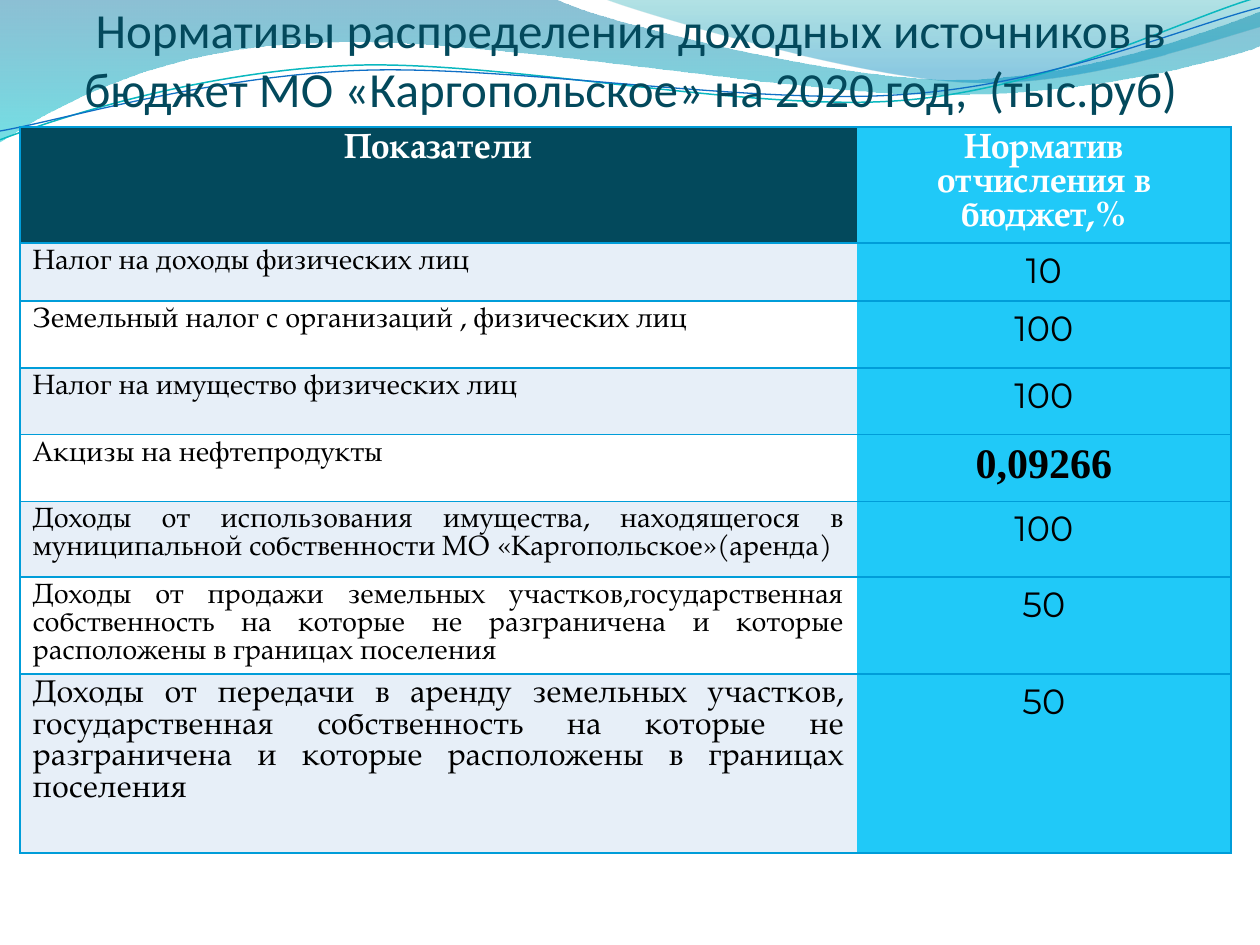
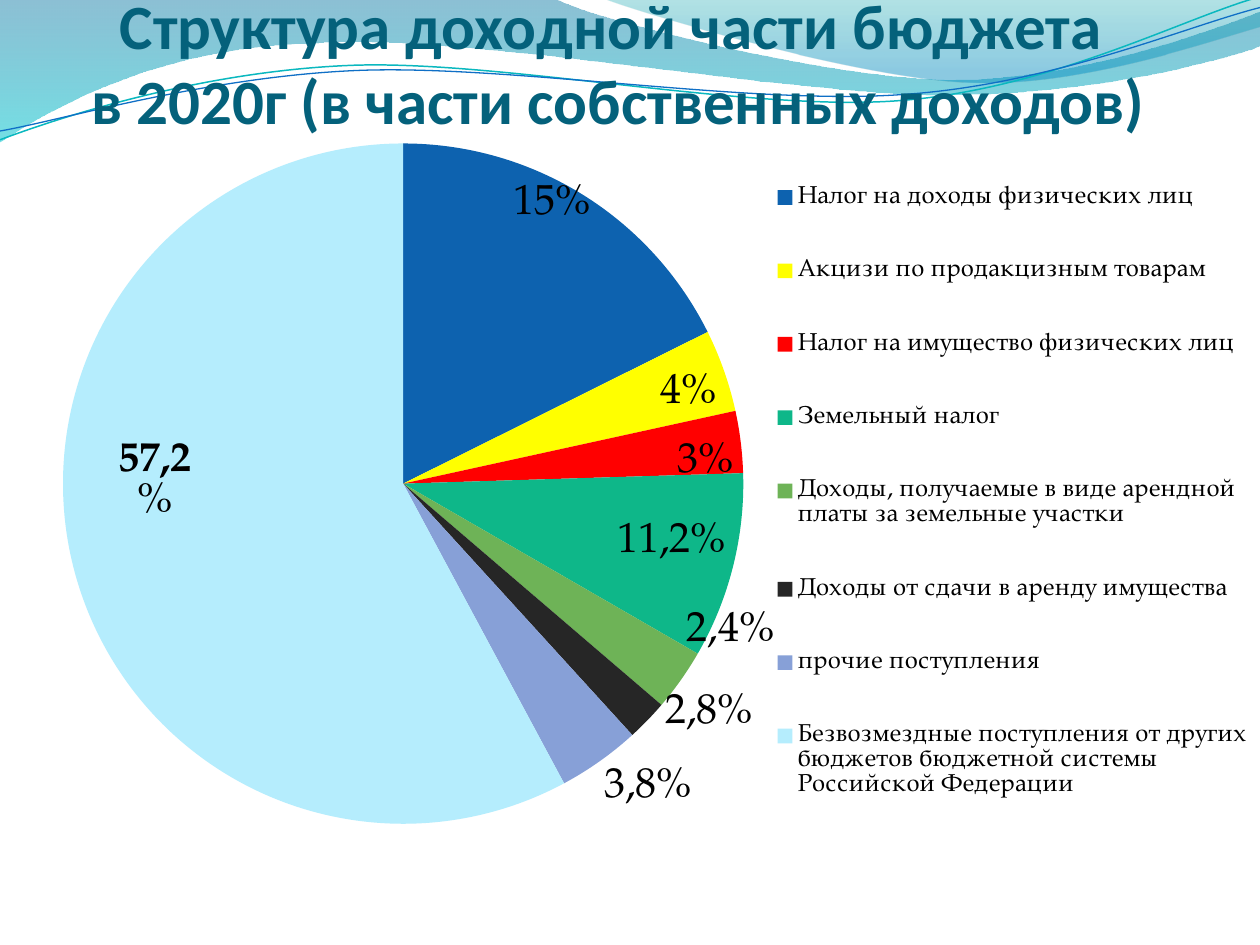
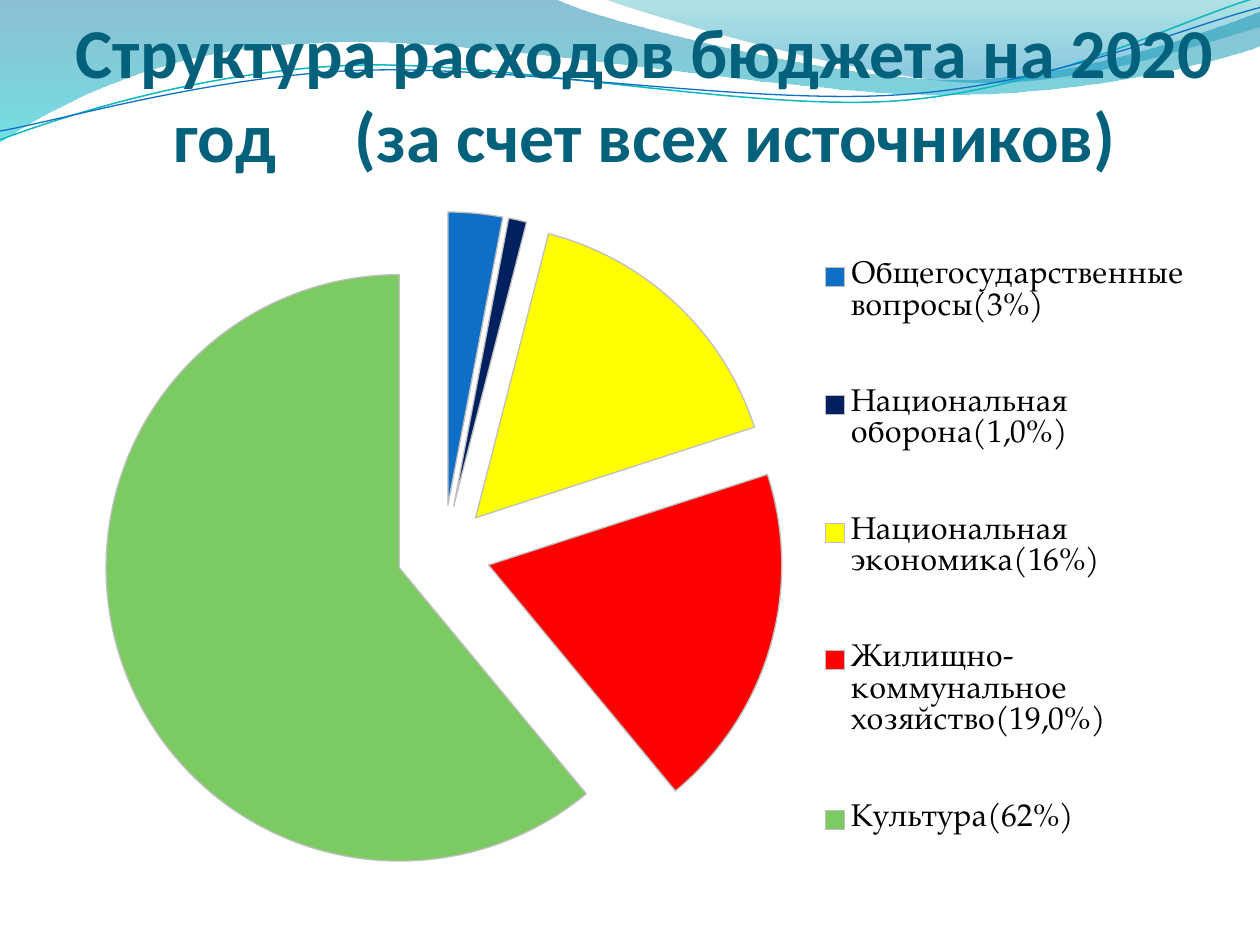
"""Build three slides on the 2020 municipal budget."""
from lxml import etree
from pptx import Presentation
from pptx import util as u
from pptx.chart.data import CategoryChartData
from pptx.dml.color import RGBColor
from pptx.enum import chart as charts, text
from pptx.oxml import ns

BODY_FONT = "TeX Gyre Pagella"
NUMBER_FONT = "Montserrat"
TITLE_FONT = "Calibri"
BLACK = RGBColor(0x00, 0x00, 0x00)
WHITE = RGBColor(0xFF, 0xFF, 0xFF)
DARK_TEAL = RGBColor(0x03, 0x49, 0x5C)
TEAL = RGBColor(0x04, 0x61, 0x7B)
SKY = RGBColor(0x20, 0xC9, 0xF8)
PALE = RGBColor(0xE7, 0xEF, 0xF8)
BORDER = RGBColor(0x00, 0x9D, 0xD9)
BLUE = RGBColor(0x0F, 0x6F, 0xC6)
DEEP_BLUE = RGBColor(0x0D, 0x62, 0xAF)
NAVY = RGBColor(0x00, 0x20, 0x60)
YELLOW = RGBColor(0xFF, 0xFF, 0x00)
RED = RGBColor(0xFF, 0x00, 0x00)
SEA_GREEN = RGBColor(0x0E, 0xB7, 0x89)
GREEN = RGBColor(0x7C, 0xCA, 0x62)
LEAF = RGBColor(0x6E, 0xB3, 0x57)
CHARCOAL = RGBColor(0x26, 0x26, 0x26)
LAVENDER = RGBColor(0x87, 0xA0, 0xD7)
ICE = RGBColor(0xB5, 0xED, 0xFD)
GREY = RGBColor(0xBF, 0xBF, 0xBF)
AQUA_LINE = RGBColor(0x0A, 0xB8, 0xBF)
NO_STYLE = "{2D5ABB26-0587-4C30-8999-92F81FD0307C}"

WIDE_WAVE = [
    [(0, 0)], [(4.4, -0.01)],
    [(4.76, 0.17), (6.64, 0.63), (7.58, 0.63)],
    [(8.53, 0.63), (9.58, 0.26), (10, 0.09)],
    [(10.01, 0.36)],
    [(9.83, 0.44), (8.7, 0.76), (7.46, 0.75)],
    [(6.22, 0.75), (3.82, 0.28), (2.57, 0.34)],
    [(1.29, 0.36), (0.46, 0.83), (-0.01, 1.13)],
]
RIGHT_WAVE = [
    [(4.79, -0.01)],
    [(5.09, 0.11), (6.82, 0.62), (7.69, 0.65)],
    [(8.56, 0.69), (9.61, 0.32), (10, 0.21)],
    [(10, 0)],
]
AQUA_CURVE = [
    [(0, 1.11)],
    [(0.48, 0.93), (1.58, 0.57), (2.77, 0.52)],
    [(3.95, 0.47), (5.93, 0.89), (7.13, 0.8)],
    [(8.33, 0.71), (9.38, 0.15), (9.98, -0.02)],
]
BLUE_CURVE = [
    [(0, 1.04)],
    [(0.47, 0.96), (1.64, 0.61), (2.83, 0.56)],
    [(4.03, 0.51), (5.97, 0.84), (7.17, 0.75)],
    [(8.36, 0.67), (9.41, 0.21), (10, 0.06)],
]

RATES = [
    ("Налог на доходы физических лиц", "10", 0.46),
    ("Земельный налог с организаций , физических лиц", "100", 0.53),
    ("Налог на имущество физических лиц", "100", 0.53),
    ("Акцизы на нефтепродукты", "0,09266", 0.53),
    ("Доходы от использования имущества, находящегося в муниципальной "
     "собственности МО «Каргопольское»(аренда)", "100", 0.6),
    ("Доходы от продажи земельных участков,государственная собственность на "
     "которые не разграничена и которые расположены в границах поселения", "50", 0.77),
    ("Доходы от передачи в аренду земельных участков, государственная собственность "
     "на которые не разграничена и которые расположены в границах поселения", "50", 1.42),
]
INCOME = [
    ("Налог на доходы физических лиц", 18, DEEP_BLUE),
    ("Акцизи по продакцизным товарам", 4, YELLOW),
    ("Налог на имущество физических лиц", 3, RED),
    ("Земельный налог", 9, SEA_GREEN),
    ("Доходы, получаемые в виде арендной платы за земельные участки", 3, LEAF),
    ("Доходы от сдачи в аренду имущества", 2, CHARCOAL),
    ("прочие поступления", 4, LAVENDER),
    ("Безвозмездные поступления от других бюджетов бюджетной системы "
     "Российской Федерации", 59, ICE),
]
INSIDE = charts.XL_LABEL_POSITION.INSIDE_END
OUTSIDE = charts.XL_LABEL_POSITION.OUTSIDE_END
INCOME_LABELS = {
    0: (["15%"], INSIDE, (0.01, -0.02)),
    3: (["11,2%"], INSIDE, (0, 0)),
    4: (["2,4%"], OUTSIDE, (0, -0.09)),
    5: (["2,8%"], OUTSIDE, (0.01, -0.04)),
    6: (["3,8%"], OUTSIDE, (0, 0)),
    7: (["57,2", "%"], INSIDE, (0.03, -0.05)),
}
EXPENSES = [
    ("Общегосударственные вопросы(3%)", 3, BLUE),
    ("Национальная оборона(1,0%)", 1, NAVY),
    ("Национальная экономика(16%)", 16, YELLOW),
    ("Жилищно-коммунальное хозяйство(19,0%)", 19, RED),
    ("Культура(62%)", 61, GREEN),
]


def grid(value):
    """Turn tenths of the slide width into a length."""
    return u.Cm(value * 2.54)


def style(font, size, color, name=BODY_FONT, bold=False):
    """Set the look of a font."""
    font.size, font.name, font.bold = u.Pt(size), name, bold
    font.color.rgb = color


def add_span(para, words, *look, **options):
    """Add one styled run to a paragraph."""
    span = para.add_run()
    span.text = words
    style(span.font, *look, **options)
    return span


def add_outline(page, segments, closed):
    """Draw a freeform of lines and Bezier curves without shadow."""
    points = [(grid(x), grid(y)) for segment in segments for x, y in segment]
    builder = page.shapes.build_freeform(*points[0], scale=1.0)
    builder.add_line_segments(points[1:], close=closed)
    shape = builder.convert_to_shape()
    shape.shadow.inherit = False
    steps = iter(list(shape.element.iter(ns.qn("a:lnTo"))))
    for segment in segments[1:]:
        lines = [next(steps) for _ in segment]
        if len(lines) == 3:
            curve = etree.Element(ns.qn("a:cubicBezTo"))
            lines[0].addprevious(curve)
            for line in lines:
                curve.append(line[0])
                line.getparent().remove(line)
    return shape


def add_wave(page, segments, stops):
    """Draw a translucent band that fades from top to bottom."""
    wave = add_outline(page, segments, True)
    wave.line.fill.background()
    wave.fill.gradient()
    wave.fill.gradient_angle = 270
    for stop, (position, color, _) in zip(wave.fill.gradient_stops, stops):
        stop.position = position
        stop.color.rgb = RGBColor.from_string(color)
    colors = wave.element.spPr.iter(ns.qn("a:srgbClr"))
    for color, (_, _, opacity) in zip(colors, stops):
        etree.SubElement(color, ns.qn("a:alpha"), val=str(opacity * 1000))
    return wave


def add_curve(page, segments, color, width):
    """Draw a thin open curve."""
    curve = add_outline(page, segments, False)
    curve.fill.background()
    curve.line.color.rgb = color
    curve.line.width = u.Pt(width)
    return curve


def decorate(layout, page):
    """Draw the waves and hand them over to the shared layout."""
    tree = layout.shapes.element
    for holder in list(layout.placeholders):
        tree.remove(holder.element)
    waves = [
        add_wave(page, WIDE_WAVE, [(0, "0074A1", 45), (1, "00C6CF", 55)]),
        add_wave(page, RIGHT_WAVE, [(0, "00A1A9", 30), (0.8, "008BBF", 45)]),
        add_curve(page, AQUA_CURVE, AQUA_LINE, 0.85),
        add_curve(page, BLUE_CURVE, BLUE, 0.75),
    ]
    for wave in waves:
        tree.append(wave.element)


def add_title(page, area, lines, size, color=TEAL, bold=True, gap=0):
    """Add a centred title; the parts of a line are set apart by a wide space."""
    box = page.shapes.add_textbox(*map(grid, area))
    frame = box.text_frame
    frame.word_wrap = True
    frame.vertical_anchor = text.MSO_ANCHOR.BOTTOM
    frame.margin_left = frame.margin_right = frame.margin_bottom = 0
    frame.margin_top = grid(0.05)
    para = frame.paragraphs[0]
    para.alignment = text.PP_ALIGN.CENTER
    look = (size, color, TITLE_FONT, bold)
    for row, parts in enumerate(lines):
        if row:
            para.add_line_break()
        for place, part in enumerate(parts):
            if place:
                space = add_span(para, " ", *look)
                space.font._element.set("spc", str(gap * 100))
            add_span(para, part, *look)


def add_borders(cell, sides):
    """Draw the given cell sides, in the order L, R, T, B."""
    properties = cell._tc.get_or_add_tcPr()
    for index, side in enumerate(sides):
        line = etree.Element(ns.qn(f"a:ln{side}"), w=str(u.Pt(1)))
        fill = etree.SubElement(line, ns.qn("a:solidFill"))
        etree.SubElement(fill, ns.qn("a:srgbClr"), val=str(BORDER))
        properties.insert(index, line)


def fill_cell(cell, words, fill, sides, align, size, *look, pitch=None, **options):
    """Write one table cell, with a fixed line pitch if one is given."""
    cell.fill.solid()
    cell.fill.fore_color.rgb = fill
    para = cell.text_frame.paragraphs[0]
    para.alignment = align
    if pitch:
        para.line_spacing = u.Pt(pitch)
    add_span(para, words, size, *look, **options)
    add_borders(cell, sides)


def add_rates_table(page):
    """Add the table of income sources and their rates."""
    heights = [0.92] + [height for _, _, height in RATES]
    frame = page.shapes.add_table(len(heights), 2, grid(0.16), grid(1.01),
                                  grid(9.61), grid(sum(heights)))
    table = frame.table
    table.first_row = table.horz_banding = False
    frame.element.find(".//" + ns.qn("a:tableStyleId")).text = NO_STYLE
    for column, width in zip(table.columns, (6.64, 2.97)):
        column.width = grid(width)
    for row, height in zip(table.rows, heights):
        row.height = grid(height)
    align = text.PP_ALIGN
    headings = [("Показатели", DARK_TEAL, "LTB"),
                ("Норматив отчисления в бюджет,%", SKY, "RTB")]
    for column, (heading, fill, sides) in enumerate(headings):
        fill_cell(table.cell(0, column), heading, fill, sides, align.CENTER,
                  20, WHITE, bold=True, pitch=19.5)
    for row, (source, rate, _) in enumerate(RATES, 1):
        size = 18 if row == len(RATES) else 16
        fill_cell(table.cell(row, 0), source, PALE if row % 2 else WHITE, "LTB",
                  align.JUSTIFY if row > 4 else align.LEFT, size, BLACK, pitch=size)
        look = (24, BLACK, "Times New Roman", True) if "," in rate else (20, BLACK, NUMBER_FONT)
        fill_cell(table.cell(row, 1), rate, SKY, "RTB", align.CENTER, *look)


def add_layout(parent, index, **values):
    """Insert a manual chart layout into a chart element."""
    for old in parent.findall(ns.qn("c:layout")):
        parent.remove(old)
    layout = etree.Element(ns.qn("c:layout"))
    manual = etree.SubElement(layout, ns.qn("c:manualLayout"))
    for name, value in values.items():
        etree.SubElement(manual, ns.qn(f"c:{name}"), val=str(value))
    parent.insert(index, layout)


def place_part(chart, name, index, area, **target):
    """Give the plot or the legend a fixed share of the chart."""
    part = next(chart.element.iter(ns.qn(name)))
    add_layout(part, index, **target, xMode="edge", yMode="edge", **dict(zip("xywh", area)))


def add_pie(page, area, slices, legend_size, plot_area, legend_area, outline=None):
    """Add a pie chart with a legend on the right."""
    data = CategoryChartData()
    data.categories = [name for name, _, _ in slices]
    data.add_series("Series 1", [value for _, value, _ in slices])
    chart = page.shapes.add_chart(charts.XL_CHART_TYPE.PIE, *map(grid, area), data).chart
    chart.has_title = False
    style(chart.font, 18, BLACK)
    chart.has_legend = True
    chart.legend.position = charts.XL_LEGEND_POSITION.RIGHT
    chart.legend.include_in_layout = False
    style(chart.legend.font, legend_size, BLACK)
    place_part(chart, "c:plotArea", 0, plot_area, layoutTarget="inner")
    place_part(chart, "c:legend", 1, legend_area)
    plot = chart.plots[0]
    plot.vary_by_categories = True
    for index, (_, _, color) in enumerate(slices):
        look = plot.series[0].points[index].format
        look.fill.solid()
        look.fill.fore_color.rgb = color
        if outline:
            look.line.color.rgb = outline
            look.line.width = u.Pt(0.75)
        else:
            look.line.fill.background()
    return chart


def label_slices(chart, labels):
    """Show percentages and put custom wording on some slices."""
    series = chart.plots[0].series[0]
    common = series.data_labels
    common.show_value, common.show_percentage = False, True
    common.number_format, common.number_format_is_linked = "0%", False
    common.position = INSIDE
    style(common.font, 24, BLACK)
    for index, (lines, position, _) in labels.items():
        label = series.points[index].data_label
        frame = label.text_frame
        for row, words in enumerate(lines):
            para = frame.add_paragraph() if row else frame.paragraphs[0]
            add_span(para, words, 24, BLACK, bold=len(lines) > 1 and row == 0)
        label.position = position
    for item, (_, _, (x, y)) in zip(chart.element.iter(ns.qn("c:dLbl")), labels.values()):
        if x or y:
            add_layout(item, 1, x=x, y=y)
    group = next(chart.element.iter(ns.qn("c:dLbls")))
    for leader in group.findall(ns.qn("c:showLeaderLines")):
        group.remove(leader)
    etree.SubElement(group, ns.qn("c:showLeaderLines"), val="0")


def explode(chart, percent):
    """Pull all slices away from the centre."""
    point = next(chart.element.iter(ns.qn("c:dPt")))
    point.addprevious(etree.Element(ns.qn("c:explosion"), val=str(percent)))


def main():
    """Build and save the deck."""
    deck = Presentation()
    deck.slide_width, deck.slide_height = grid(10), grid(7.5)
    blank = deck.slide_layouts[6]
    rates, income, expenses = [deck.slides.add_slide(blank) for _ in range(3)]
    decorate(blank, rates)

    add_title(rates, (0.16, 0, 9.69, 0.93),
              [["Нормативы распределения доходных источников в",
                "бюджет МО «Каргопольское» на 2020 год,", "(тыс.руб)"]],
              28, DARK_TEAL, bold=False, gap=6)
    add_rates_table(rates)

    add_title(income, (0.31, 0, 9.19, 1.09),
              [["Структура доходной части бюджета "],
               ["в 2020г (в части собственных доходов)"]], 36)
    chart = add_pie(income, (0, 1.02, 10, 6.48), INCOME, 14,
                    (0.05, 0.01, 0.54, 0.85), (0.62, 0.01, 0.38, 0.87))
    label_slices(chart, INCOME_LABELS)

    add_title(expenses, (0.23, 0.23, 9.77, 1.17),
              [["Структура расходов бюджета на 2020 год",
                "(за счет всех источников)"]], 40, gap=36)
    chart = add_pie(expenses, (0.55, 1.56, 9, 5.7), EXPENSES, 18,
                    (0.03, 0.02, 0.6, 0.95), (0.65, 0, 0.35, 0.98), GREY)
    explode(chart, 16)
    deck.save("out.pptx")


if __name__ == "__main__":
    main()
